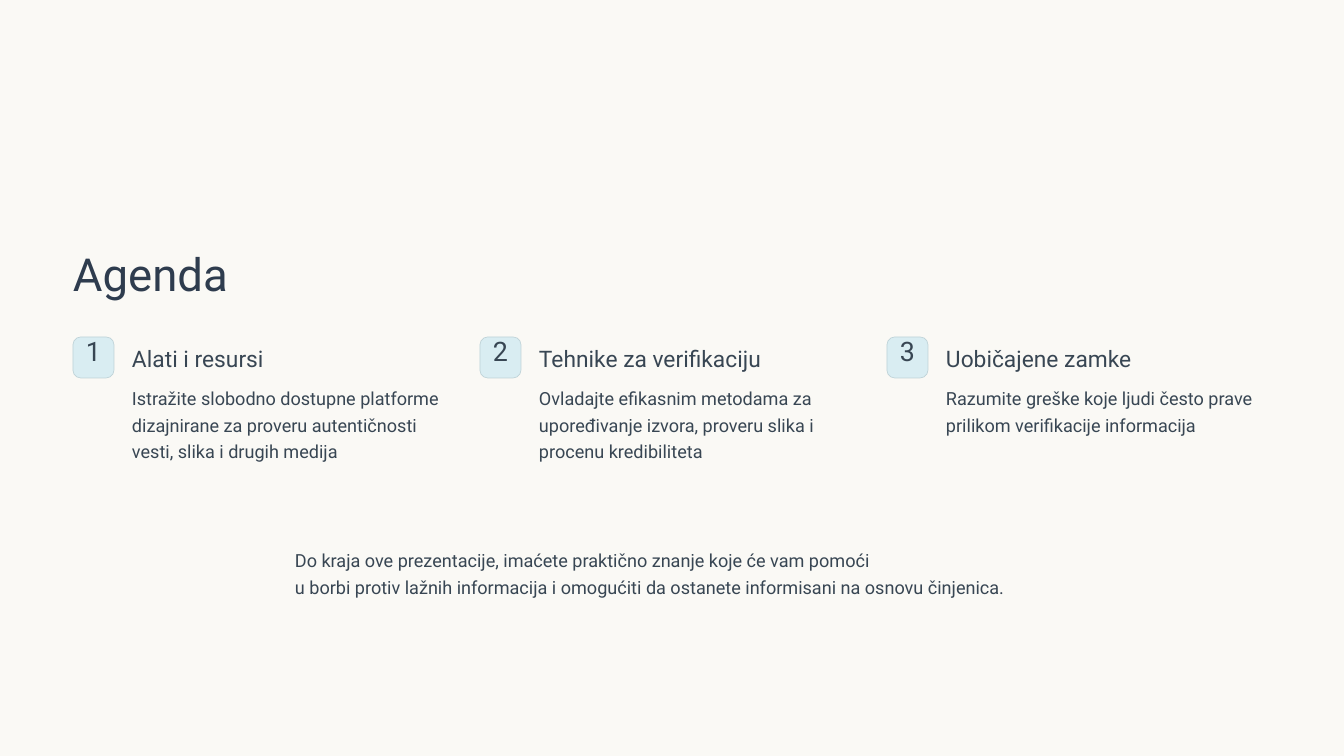
from pptx import Presentation
from pptx import util as u
from pptx.dml.color import RGBColor
from pptx.enum import shapes, text

FONT = "Roboto"
INK = "384653"
TITLE_INK = "2E3C4E"
PAPER = "FAF9F5"
BADGE_FILL = "D9EDF2"
BADGE_LINE = "BFD3D8"
COLUMN_PITCH = 407
TOPICS = [
    ("Alati i resursi",
     "Istražite slobodno dostupne platforme dizajnirane za proveru "
     "autentičnosti vesti, slika i drugih medija"),
    ("Tehnike za verifikaciju",
     "Ovladajte efikasnim metodama za upoređivanje izvora, "
     "proveru slika i procenu kredibiliteta"),
    ("Uobičajene zamke",
     "Razumite greške koje ljudi često prave prilikom "
     "verifikacije informacija"),
]
CLOSING = [
    "Do kraja ove prezentacije, imaćete praktično znanje koje će vam pomoći",
    "u borbi protiv lažnih informacija i omogućiti da ostanete informisani "
    "na osnovu činjenica.",
]


def px(length):
    return u.Emu(round(length * 914400 / 84))


def color(value):
    return RGBColor.from_string(value)


def add_text(page, area, lines, size, spacing, ink=INK,
             align=text.PP_ALIGN.LEFT):
    box = page.shapes.add_textbox(*map(px, area))
    frame = box.text_frame
    frame.word_wrap = True
    frame.margin_left = frame.margin_right = 0
    frame.margin_top = frame.margin_bottom = 0
    for index, line in enumerate(lines):
        para = frame.add_paragraph() if index else frame.paragraphs[0]
        para.alignment = align
        para.line_spacing = u.Pt(spacing)
        span = para.add_run()
        span.text = line
        span.font.name = FONT
        span.font.size = u.Pt(size)
        span.font.color.rgb = color(ink)


def add_badge(page, left, top, side, number):
    badge = page.shapes.add_shape(shapes.MSO_SHAPE.ROUNDED_RECTANGLE,
                                  *map(px, (left, top, side, side)))
    badge.adjustments[0] = 0.19
    badge.shadow.inherit = False
    badge.fill.solid()
    badge.fill.fore_color.rgb = color(BADGE_FILL)
    badge.line.color.rgb = color(BADGE_LINE)
    badge.line.width = u.Pt(0.6)
    add_text(page, (left + 7, top + 3, side - 14, 34), [str(number)],
             23, 23, align=text.PP_ALIGN.CENTER)


def add_topic(page, left, top, width, number, heading, body):
    add_badge(page, left, top, 41, number)
    text_left, text_width = left + 59, width - 59
    add_text(page, (text_left, top + 7, text_width, 29), [heading], 19.5, 24)
    add_text(page, (text_left, top + 45, text_width, 82), [body], 15.5, 23)


def add_agenda(page, left, top, width):
    add_text(page, (left, top, 456, 57), ["Agenda"], 39, 48.5, TITLE_INK)
    for index, (heading, body) in enumerate(TOPICS):
        add_topic(page, left + index * COLUMN_PITCH, top + 93,
                  width - 2 * COLUMN_PITCH, index + 1, heading, body)
    add_text(page, (left + 222, top + 300, 900, 56), CLOSING, 15.5, 23)


def main():
    deck = Presentation()
    deck.slide_width, deck.slide_height = px(1344), px(756)
    page = deck.slides.add_slide(deck.slide_layouts[6])
    page.background.fill.solid()
    page.background.fill.fore_color.rgb = color(PAPER)
    add_agenda(page, 73, 244, 1198)
    deck.save("out.pptx")


if __name__ == "__main__":
    main()
